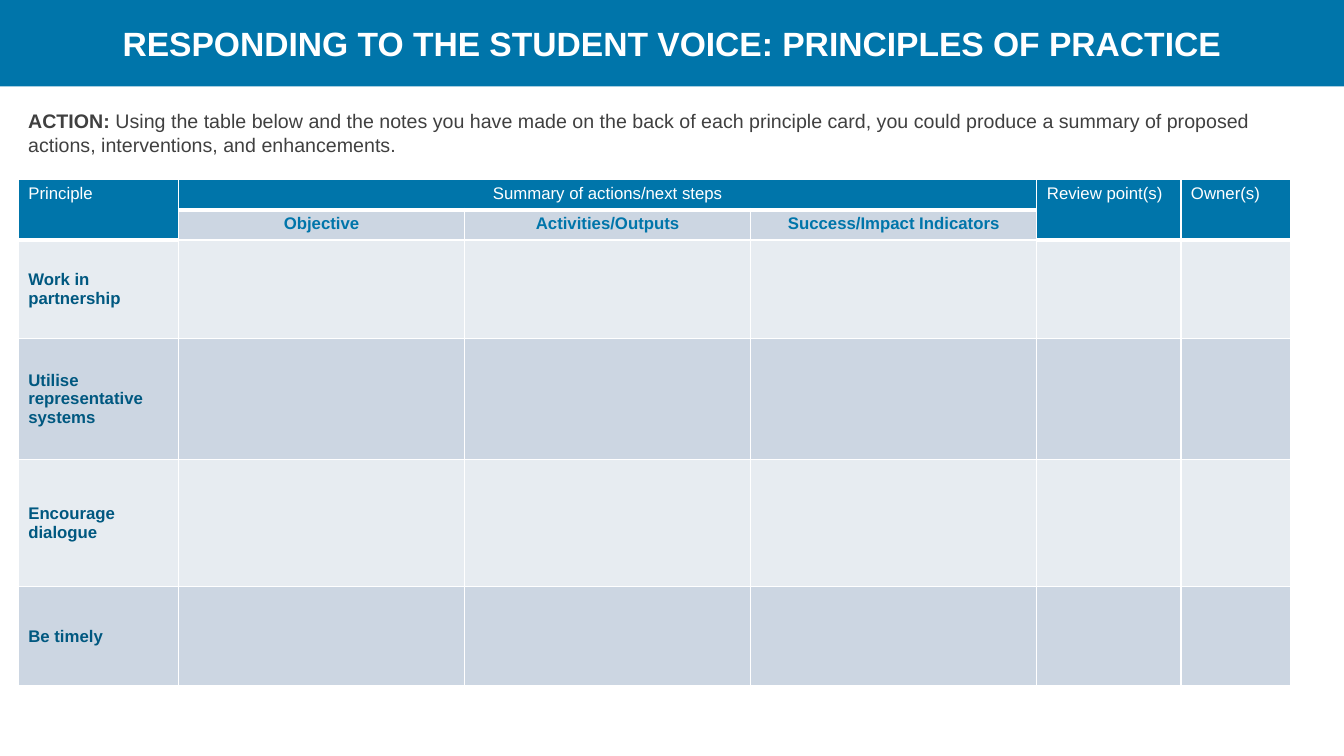
from lxml.etree import SubElement
from pptx import Presentation
from pptx.dml.color import RGBColor
from pptx.enum.text import MSO_ANCHOR, MSO_AUTO_SIZE, PP_ALIGN
from pptx.oxml.ns import qn
from pptx.util import Cm, Pt

BLUE, NAVY, GREY, WHITE = "0075AA", "005880", "404040", "FFFFFF"
DARK, LIGHT = "CCD6E2", "E7ECF1"
COLS = [4.04, 7.21, 7.21, 7.21, 3.63, 2.77]
HEADS = [(0, 1, 0, "Principle"), (1, 0, 3, "Summary of actions/next steps"),
         (4, 1, 4, "Review point(s)"), (5, 1, 5, "Owner(s)")]
STEPS = ["Objective", "Activities/Outputs", "Success/Impact Indicators"]
RULES = [("Work in partnership", 2.48), ("Utilise representative systems", 3.06),
         ("Encourage dialogue", 3.2), ("Be timely", 2.49)]


def paint(fill, tone):
    fill.solid()
    fill.fore_color.rgb = RGBColor.from_string(tone)


def write(para, text, size, tone, bold=False):
    run = para.add_run()
    run.text = text
    font = run.font
    font.name, font.size, font.bold = "Arial", Pt(size), bold
    font.color.rgb = RGBColor.from_string(tone)


def banner(slide, left, top, width, height):
    title = slide.shapes.title
    title.left, title.top = Cm(left), Cm(top)
    title.width, title.height = Cm(width), Cm(height)
    paint(title.fill, BLUE)
    frame = title.text_frame
    frame.auto_size = MSO_AUTO_SIZE.NONE
    frame.word_wrap = True
    frame.vertical_anchor = MSO_ANCHOR.MIDDLE
    para = frame.paragraphs[0]
    para.alignment = PP_ALIGN.CENTER
    write(para, "RESPONDING TO THE STUDENT VOICE: PRINCIPLES OF PRACTICE", 24, WHITE, True)


def brief(slide, left, top, width, height):
    frame = slide.shapes.add_textbox(Cm(left), Cm(top), Cm(width), Cm(height)).text_frame
    frame.word_wrap = True
    para = frame.paragraphs[0]
    write(para, "ACTION: ", 14, GREY, True)
    write(para, "Using the table below and the notes you have made on the back of each "
          "principle card, you could produce a summary of proposed actions, "
          "interventions, and enhancements.", 14, GREY)


def style(cell, tone, base):
    props = cell._tc.get_or_add_tcPr()
    for side, width in (("L", 1), ("R", 1), ("T", 1), ("B", base)):
        line = SubElement(props, qn(f"a:ln{side}"), w=str(Pt(width)))
        fill = SubElement(line, qn("a:solidFill"))
        SubElement(fill, qn("a:srgbClr"), val=WHITE)
    paint(cell.fill, tone)


def label(cell, text, tone, bold, align=PP_ALIGN.LEFT):
    para = cell.text_frame.paragraphs[0]
    para.alignment = align
    write(para, text, 12, tone, bold)


def plan(slide, left, top, width, head):
    highs = [head, head] + [high for _, high in RULES]
    grid = slide.shapes.add_table(len(highs), len(COLS), Cm(left), Cm(top),
                                  Cm(width), Cm(sum(highs))).table
    for col, share in zip(grid.columns, COLS):
        col.width = Cm(width * share / sum(COLS))
    for row, high in zip(grid.rows, highs):
        row.height = Cm(high)
    for r in range(len(highs)):
        for c in range(len(COLS)):
            top_head = r == 0 or (r == 1 and c in (0, 4, 5))
            tone = BLUE if top_head else DARK if r % 2 else LIGHT
            style(grid.cell(r, c), tone, 3 if top_head else 1)
    for c, row, end, text in HEADS:
        cell = grid.cell(0, c)
        cell.merge(grid.cell(row, end))
        label(cell, text, WHITE, False, PP_ALIGN.CENTER if end > c else PP_ALIGN.LEFT)
    for c, text in enumerate(STEPS, 1):
        label(grid.cell(1, c), text, BLUE, True, PP_ALIGN.CENTER)
    for r, (text, _) in enumerate(RULES, 2):
        cell = grid.cell(r, 0)
        cell.vertical_anchor = MSO_ANCHOR.MIDDLE
        label(cell, text, NAVY, True)


def main():
    deck = Presentation()
    deck.slide_width, deck.slide_height = Cm(33.87), Cm(19.05)
    slide = deck.slides.add_slide(deck.slide_layouts[5])
    banner(slide, 0, 0, 33.87, 2.18)
    brief(slide, 0.46, 2.62, 31.83, 1.45)
    plan(slide, 0.46, 4.52, 32.07, 0.72)
    deck.save("out.pptx")


if __name__ == "__main__":
    main()
